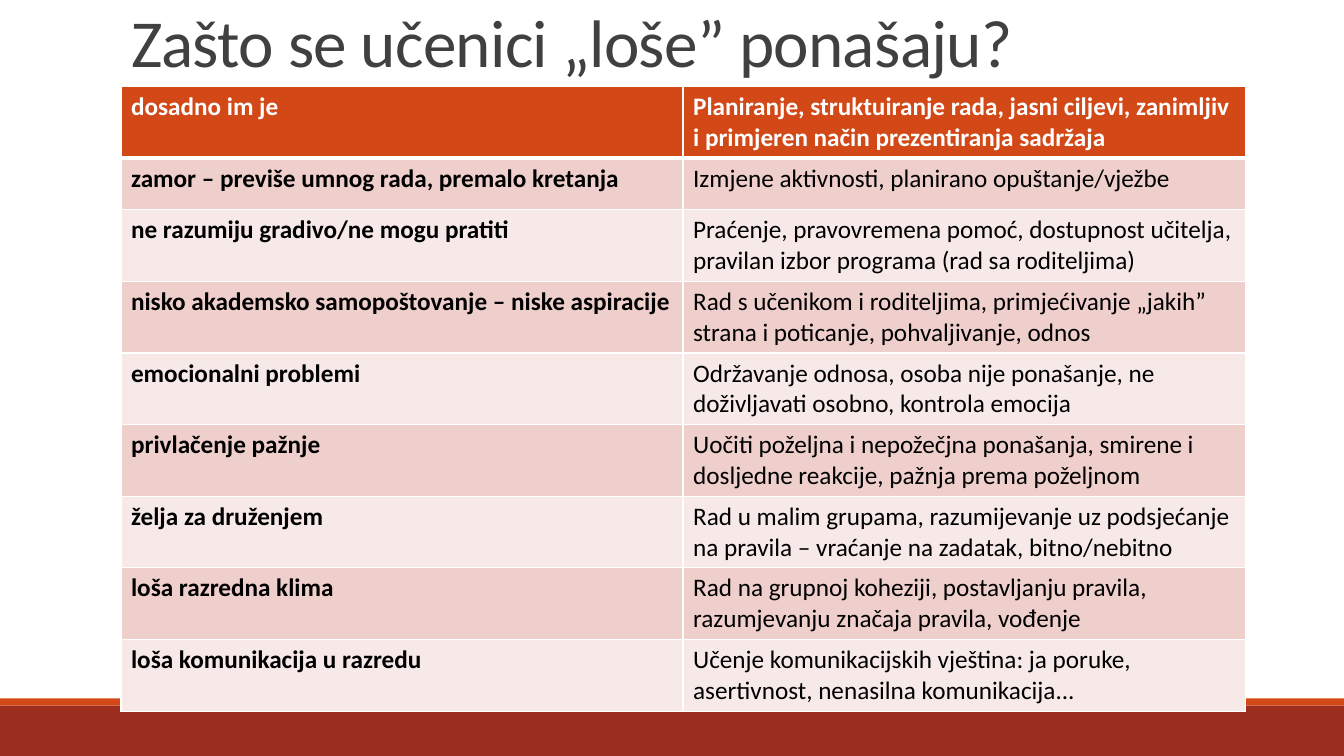
from lxml import etree
from pptx import Presentation
from pptx.dml.color import RGBColor
from pptx.enum.shapes import MSO_SHAPE
from pptx.enum.text import MSO_ANCHOR, MSO_AUTO_SIZE, PP_ALIGN
from pptx.oxml.ns import qn
from pptx.util import Inches, Pt

RECTANGLE = MSO_SHAPE.RECTANGLE
BOTTOM = MSO_ANCHOR.BOTTOM
LEFT = PP_ALIGN.LEFT
NO_FIT = MSO_AUTO_SIZE.NONE

WIDTH, HEIGHT = 13.33, 7.5
TITLE_BOX = (1.2, 0, 11, 0.86)
TABLE_BOX = (1.2, 0.86, 11.15, 6.18)
FOOTER_BOX = (0, 6.93, WIDTH, 0.57)
HEADER_HEIGHT, SHORT_HEIGHT = 0.7, 0.51
STRIPE_HEIGHT = 0.07

ORANGE, BRICK, WHITE = "D34817", "9B2D1F", "FFFFFF"
BANDS = ("F7E9E8", "EFCFCC")

TITLE = "Zašto se učenici „loše” ponašaju?"
CAUSES_AND_RESPONSES = [
    ("dosadno im je",
     "Planiranje, struktuiranje rada, jasni ciljevi, zanimljiv i primjeren način prezentiranja sadržaja"),
    ("zamor – previše umnog rada, premalo kretanja",
     "Izmjene aktivnosti, planirano opuštanje/vježbe"),
    ("ne razumiju gradivo/ne mogu pratiti",
     "Praćenje, pravovremena pomoć, dostupnost učitelja, pravilan izbor programa (rad sa roditeljima)"),
    ("nisko akademsko samopoštovanje – niske aspiracije",
     "Rad s učenikom i roditeljima, primjećivanje „jakih” strana i poticanje, pohvaljivanje, odnos"),
    ("emocionalni problemi",
     "Održavanje odnosa, osoba nije ponašanje, ne doživljavati osobno, kontrola emocija"),
    ("privlačenje pažnje",
     "Uočiti poželjna i nepožečjna ponašanja, smirene i dosljedne reakcije, pažnja prema poželjnom"),
    ("želja za druženjem",
     "Rad u malim grupama, razumijevanje uz podsjećanje na pravila – vraćanje na zadatak, bitno/nebitno"),
    ("loša razredna klima",
     "Rad na grupnoj koheziji, postavljanju pravila, razumjevanju značaja pravila, vođenje"),
    ("loša komunikacija u razredu",
     "Učenje komunikacijskih vještina: ja poruke, asertivnost, nenasilna komunikacija..."),
]


def color(value):
    return RGBColor.from_string(value)


def apply(target, **values):
    for name, value in values.items():
        setattr(target, name, value)


def write(frame, text, size, ink, bold=False):
    para = frame.paragraphs[0]
    para.alignment = LEFT
    span = para.add_run()
    span.text = text
    apply(span.font, name="Calibri", size=Pt(size), bold=bold)
    span.font.color.rgb = color(ink)
    return para, span


def add_bar(page, box, fill):
    bar = page.shapes.add_shape(RECTANGLE, *map(Inches, box))
    bar.shadow.inherit = False
    bar.fill.solid()
    bar.fill.fore_color.rgb = color(fill)
    bar.line.fill.background()


def add_footer(page, box):
    left, top, width, height = box
    add_bar(page, (left, top + STRIPE_HEIGHT, width, height - STRIPE_HEIGHT), BRICK)
    add_bar(page, (left, top, width, STRIPE_HEIGHT), ORANGE)


def add_title(page, box):
    title = page.shapes.title
    left, top, width, height = map(Inches, box)
    apply(title, left=left, top=top, width=width, height=height)
    apply(title.text_frame, vertical_anchor=BOTTOM, word_wrap=True, auto_size=NO_FIT)
    para, span = write(title.text_frame, TITLE, 48, "404040")
    para.line_spacing = 0.85
    span.font._element.set("spc", "-50")


def set_borders(cell, bottom_width):
    properties = cell._tc.get_or_add_tcPr()
    for side, width in (("L", 1), ("R", 1), ("T", 1), ("B", bottom_width)):
        line = etree.SubElement(properties, qn(f"a:ln{side}"), w=str(Pt(width)))
        fill = etree.SubElement(line, qn("a:solidFill"))
        etree.SubElement(fill, qn("a:srgbClr"), val=WHITE)


def add_causes_table(page, box):
    row_count, column_count = len(CAUSES_AND_RESPONSES), 2
    table = page.shapes.add_table(row_count, column_count, *map(Inches, box)).table
    for column in table.columns:
        column.width = Inches(box[2] / column_count)
    rest = (box[3] - HEADER_HEIGHT - SHORT_HEIGHT) / (row_count - 2)
    heights = [HEADER_HEIGHT, SHORT_HEIGHT] + [rest] * (row_count - 2)
    for r, (texts, height) in enumerate(zip(CAUSES_AND_RESPONSES, heights)):
        table.rows[r].height = Inches(height)
        header = r == 0
        for c, text in enumerate(texts):
            cell = table.cell(r, c)
            set_borders(cell, 3 if header else 1)
            cell.fill.solid()
            cell.fill.fore_color.rgb = color(ORANGE if header else BANDS[r % 2])
            write(cell.text_frame, text, 18, WHITE if header else "000000",
                  bold=header or c == 0)


def main():
    deck = Presentation()
    apply(deck, slide_width=Inches(WIDTH), slide_height=Inches(HEIGHT))
    page = deck.slides.add_slide(deck.slide_layouts.get_by_name("Title Only"))
    add_footer(page, FOOTER_BOX)
    add_title(page, TITLE_BOX)
    add_causes_table(page, TABLE_BOX)
    deck.save("out.pptx")


if __name__ == "__main__":
    main()
